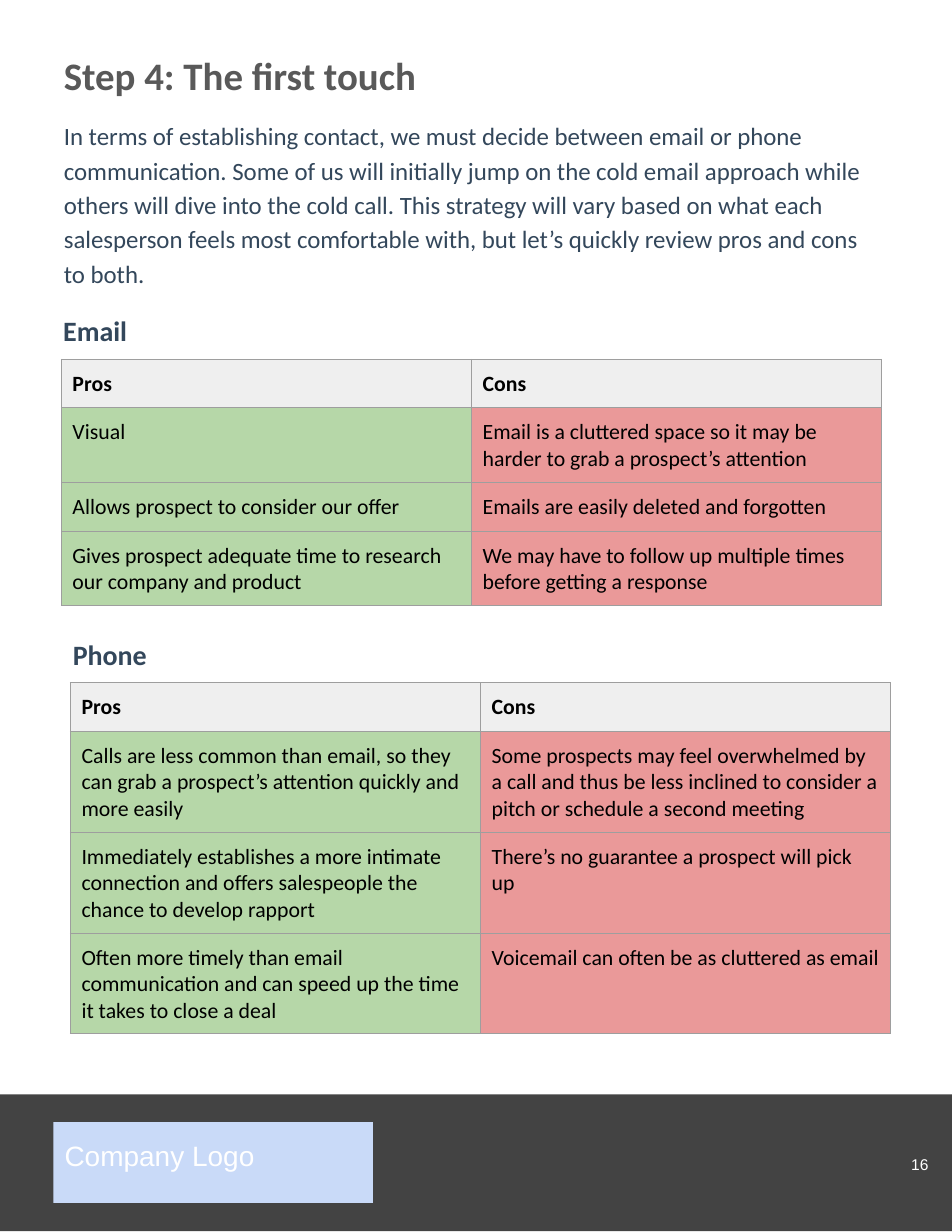
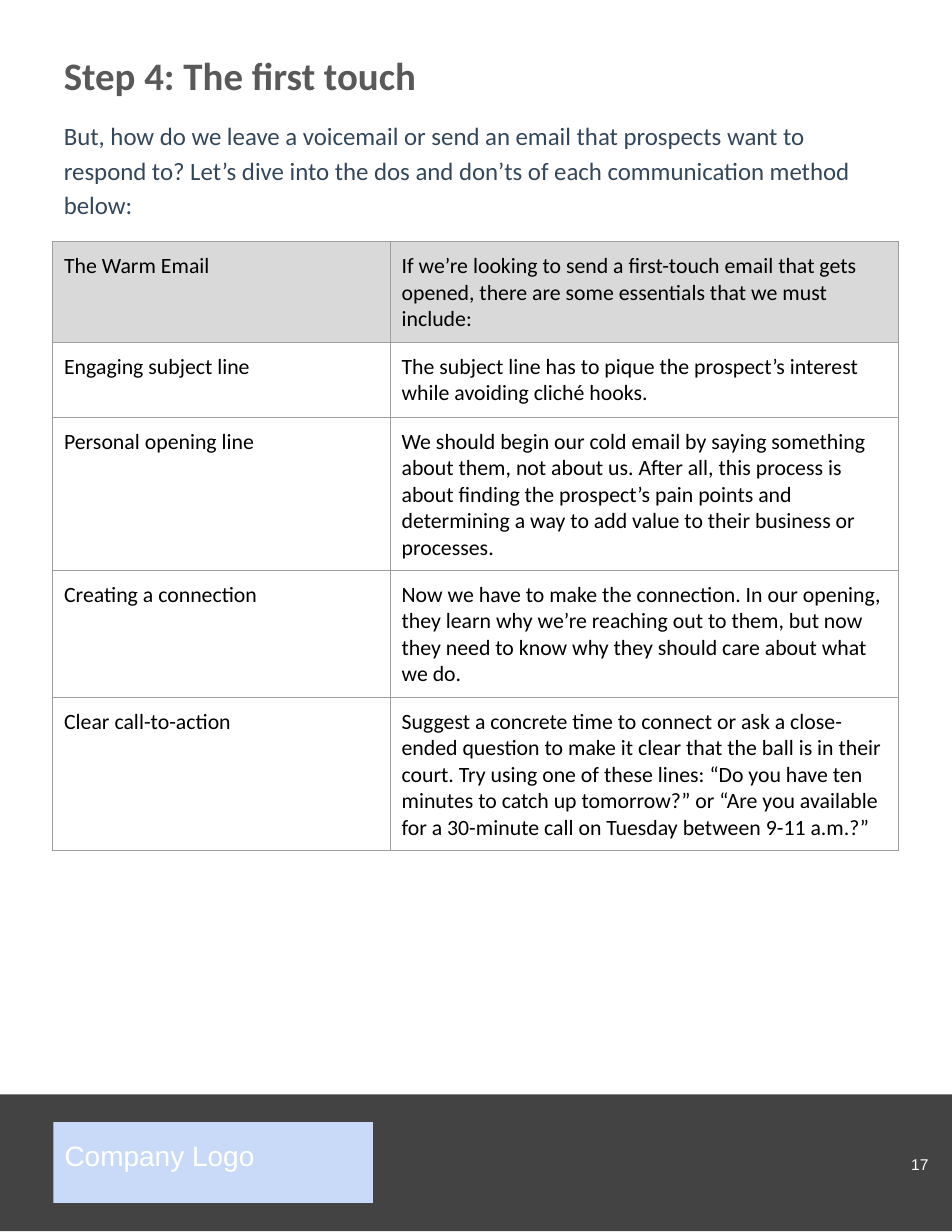
from lxml.etree import SubElement as Sub
from pptx import Presentation
from pptx.dml.color import RGBColor
from pptx.enum.shapes import MSO_SHAPE as Shape
from pptx.enum.text import MSO_ANCHOR as Anchor, PP_ALIGN as Align
from pptx.oxml.ns import qn
from pptx.util import Pt

NAVY, GREY, WHITE = "33475B", "595959", "FFFFFF"
GREEN, RED, PALE, SILVER = "B6D7A8", "EA9999", "EFEFEF", "D9D9D9"
BAND, BLUE, RULE = "434343", "C9DAF8", "9E9E9E"
INSET = Pt(7.2)
TITLE = "Step 4: The first touch"
HEAD = ("Pros", "Cons")

# Each table: left, top, column widths, head fill, body fills, bold head, rows
EMAIL = (39.4, 231, (263.7, 263.7), PALE, (GREEN, RED), True, [
    HEAD,
    ("Visual",
     "Email is a cluttered space so it may be harder to grab a prospect’s attention"),
    ("Allows prospect to consider our offer",
     "Emails are easily deleted and forgotten"),
    ("Gives prospect adequate time to research our company and product",
     "We may have to follow up multiple times before getting a response"),
])
PHONE = (45.2, 438.9, (263.7, 263.7), PALE, (GREEN, RED), True, [
    HEAD,
    ("Calls are less common than email, so they can grab a prospect’s attention "
     "quickly and more easily",
     "Some prospects may feel overwhelmed by a call and thus be less inclined to "
     "consider a pitch or schedule a second meeting"),
    ("Immediately establishes a more intimate connection and offers salespeople "
     "the chance to develop rapport",
     "There’s no guarantee a prospect will pick up"),
    ("Often more timely than email communication and can speed up the time it "
     "takes to close a deal",
     "Voicemail can often be as cluttered as email"),
])
WARM = (34, 155.3, (217, 326.6), SILVER, (None, None), False, [
    ("The Warm Email",
     "If we’re looking to send a first-touch email that gets opened, there are "
     "some essentials that we must include:"),
    ("Engaging subject line",
     "The subject line has to pique the prospect’s interest while avoiding "
     "cliché hooks."),
    ("Personal opening line",
     "We should begin our cold email by saying something about them, not about "
     "us. After all, this process is about finding the prospect’s pain points "
     "and determining a way to add value to their business or processes."),
    ("Creating a connection",
     "Now we have to make the connection. In our opening, they learn why we’re "
     "reaching out to them, but now they need to know why they should care about "
     "what we do."),
    ("Clear call-to-action",
     "Suggest a concrete time to connect or ask a close-ended question to make it "
     "clear that the ball is in their court. Try using one of these lines: “Do you "
     "have ten minutes to catch up tomorrow?” or “Are you available for a "
     "30-minute call on Tuesday between 9-11 a.m.?”"),
])

# Each page: number, intro, subheads (text, left, top), tables
PAGES = [
    (16,
     "In terms of establishing contact, we must decide between email or phone "
     "communication. Some of us will initially jump on the cold email approach "
     "while others will dive into the cold call. This strategy will vary based on "
     "what each salesperson feels most comfortable with, but let’s quickly review "
     "pros and cons to both.",
     [("Email", 33.5, 191.4), ("Phone", 39.7, 399.3)], [EMAIL, PHONE]),
    (17,
     "But, how do we leave a voicemail or send an email that prospects want to "
     "respond to? Let’s dive into the dos and don’ts of each communication method "
     "below:",
     [], [WARM]),
]


def paint(fill, color):
    if color:
        fill.solid()
        fill.fore_color.rgb = RGBColor.from_string(color)
    else:
        fill.background()


def write(box, text, size, color, bold=False, font="Calibri"):
    """Put one paragraph of text in a text box or table cell."""
    box.margin_left = box.margin_right = INSET
    box.margin_top = box.margin_bottom = INSET
    box.word_wrap = True
    frame = getattr(box, "text_frame", box)
    frame.text = text
    para = frame.paragraphs[0]
    face = para.runs[0].font
    face.name, face.size, face.bold = font, Pt(size), bold
    face.color.rgb = RGBColor.from_string(color)
    return para


deck = Presentation()
deck.slide_width, deck.slide_height = Pt(612), Pt(792)

for num, intro, heads, tables in PAGES:
    slide = deck.slides.add_slide(deck.slide_layouts[6])
    shapes = slide.shapes

    band = shapes.add_shape(Shape.RECTANGLE, 0, Pt(703.5), Pt(612), Pt(88))
    band.shadow.inherit = False
    paint(band.fill, BAND)
    band.line.fill.background()

    page = shapes.add_textbox(Pt(567.2), Pt(718), Pt(36.7), Pt(60.5))
    para = write(page.text_frame, str(num), 10, WHITE, font="Arial")
    para.alignment = Align.RIGHT
    page.text_frame.vertical_anchor = Anchor.MIDDLE

    # text, left, top, width, height, size, color, bold, font, fill
    boxes = [
        (TITLE, 34, 21.6, 551, 78.5, 25, GREY, True, "Calibri", WHITE),
        (intro, 34, 67.7, 533, 126, 16, NAVY, False, "Calibri", WHITE),
        ("Company Logo", 34.4, 721.4, 205.4, 52, 18, WHITE, False, "Arial", BLUE),
    ]
    for text, x, y in heads:
        boxes.append((text, x, y, 68.4, 39.6, 18, NAVY, True, "Calibri", WHITE))
    for text, x, y, w, h, size, color, bold, font, fill in boxes:
        box = shapes.add_textbox(Pt(x), Pt(y), Pt(w), Pt(h))
        paint(box.fill, fill)
        para = write(box.text_frame, text, size, color, bold, font)
        para.line_spacing = 1.15
        para.space_after = Pt(16)

    for x, y, widths, top, fills, bold, rows in tables:
        grid = shapes.add_table(len(rows), len(widths), Pt(x), Pt(y),
                                Pt(sum(widths)), Pt(30.5 * len(rows))).table
        for col, width in zip(grid.columns, widths):
            col.width = Pt(width)
        for r, row in enumerate(rows):
            for c, text in enumerate(row):
                cell = grid.cell(r, c)
                write(cell, text, 14, "000000", bold and r == 0)
                props = cell._tc.get_or_add_tcPr()
                for side in ("lnL", "lnR", "lnT", "lnB"):
                    edge = Sub(props, qn("a:" + side), w=str(Pt(0.75)))
                    tint = Sub(edge, qn("a:solidFill"))
                    Sub(tint, qn("a:srgbClr"), val=RULE)
                paint(cell.fill, fills[c] if r else top)

deck.save("out.pptx")
